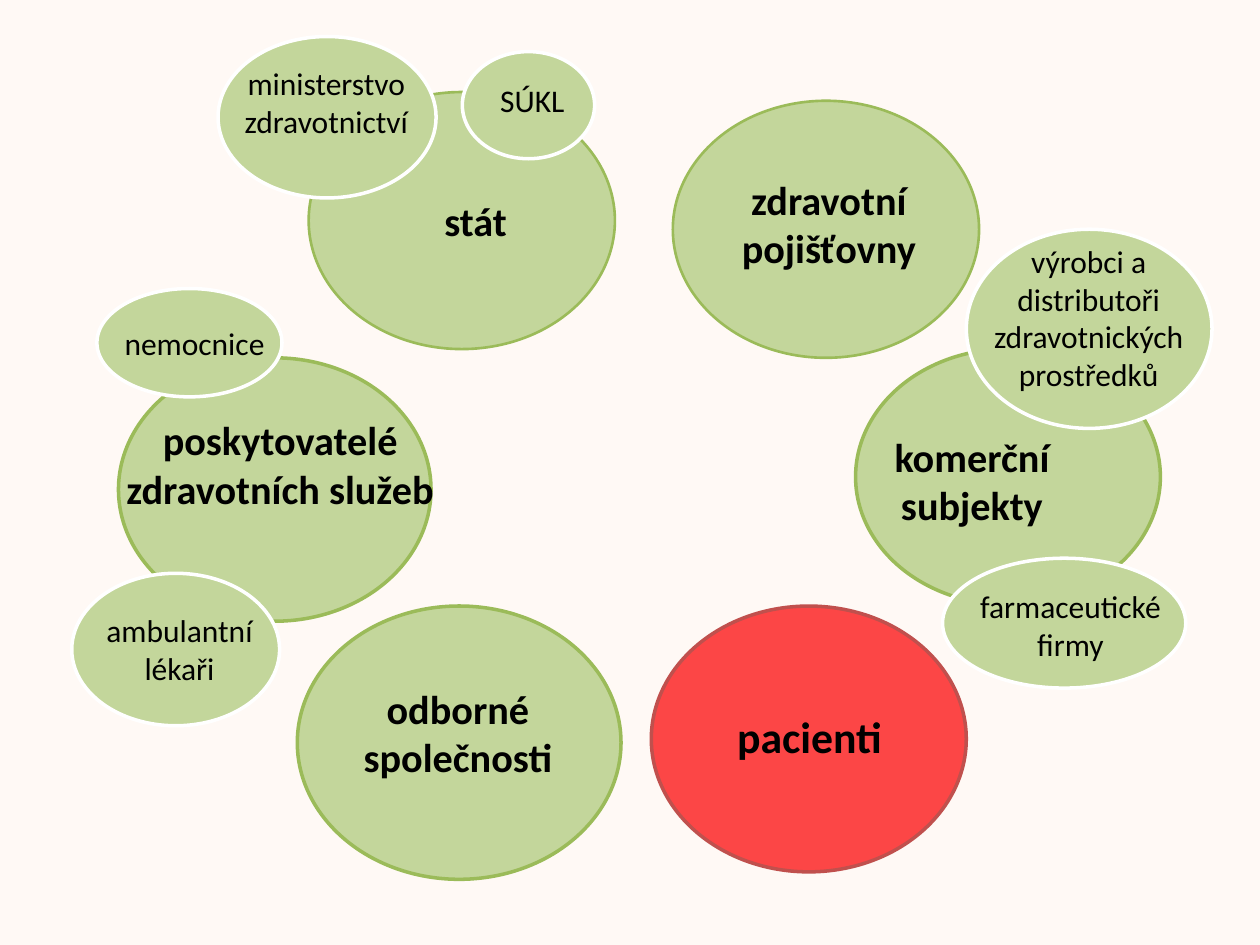
from pptx import Presentation
from pptx import util as u
from pptx.dml.color import RGBColor
from pptx.enum import shapes, text

BACKGROUND = RGBColor(0xFF, 0xF9, 0xF5)
LIGHT_GREEN = RGBColor(0xC3, 0xD6, 0x9B)
GREEN = RGBColor(0x9B, 0xBB, 0x59)
LIGHT_RED = RGBColor(0xFC, 0x46, 0x46)
RED = RGBColor(0xC0, 0x50, 0x4D)
WHITE = RGBColor(0xFF, 0xFF, 0xFF)
BLACK = RGBColor(0, 0, 0)

# Main groups: label, ellipse box, label box, fill, outline, outline width, size
GROUPS = [
    ("stát", (176.4, 52.6, 175, 146.9), (202.3, 108.7, 139, 35.3),
     LIGHT_GREEN, GREEN, 1.5, 23),
    ("komerční subjekty", (488.9, 199.4, 174.2, 146.2), (486, 243.4, 139, 63.4),
     LIGHT_GREEN, GREEN, 2, 23),
    ("zdravotní pojišťovny", (384.5, 57.6, 175, 146.9), (397.4, 96.5, 152.6, 63.4),
     LIGHT_GREEN, GREEN, 1.5, 23),
    ("poskytovatelé zdravotních služeb", (67.7, 204.5, 178.6, 150.5),
     (61.9, 234, 196.6, 90.7), LIGHT_GREEN, GREEN, 2, 23),
    ("odborné společnosti", (169.9, 346.3, 185, 156.2), (186.5, 387.4, 150.5, 63.4),
     LIGHT_GREEN, GREEN, 2, 23),
    ("pacienti", (372.2, 346.3, 180, 151.9), (393.1, 401.8, 139, 37.4),
     LIGHT_RED, RED, 2, 25),
]

# Members of the groups: label, ellipse box, label box
MEMBERS = [
    ("nemocnice", (55.4, 164.9, 105.8, 61.9), (61.9, 181.4, 98.6, 28.8)),
    ("ambulantní lékaři", (41, 327.6, 118.8, 87.1), (46.1, 345.6, 113, 51.1)),
    ("farmaceutické firmy", (538.6, 319, 139, 74.2), (545.8, 331.9, 131.8, 51.1)),
    ("výrobci a distributoři zdravotnických prostředků",
     (552.2, 131, 140.4, 113.8), (545.8, 134.6, 152.6, 94.3)),
    ("ministerstvo zdravotnictví", (124.6, 20.9, 124.6, 92.2),
     (118.1, 33.1, 136.8, 51.1)),
    ("SÚKL", (264.2, 29.5, 75.6, 61.2), (269.3, 42.5, 69.8, 28.8)),
]


class Diagram:
    font = "Calibri"

    def __init__(self, s):
        self.s = s
        fill = s.background.fill
        fill.solid()
        fill.fore_color.rgb = BACKGROUND

    def ellipse(self, box, fill, line, width):
        sp = self.s.shapes.add_shape(shapes.MSO_SHAPE.OVAL, *map(u.Pt, box))
        sp.shadow.inherit = False
        sp.fill.solid()
        sp.fill.fore_color.rgb = fill
        sp.line.color.rgb = line
        sp.line.width = u.Pt(width)

    def label(self, box, words, size, bold):
        tf = self.s.shapes.add_textbox(*map(u.Pt, box)).text_frame
        tf.word_wrap = True
        tf.auto_size = text.MSO_AUTO_SIZE.SHAPE_TO_FIT_TEXT
        p = tf.paragraphs[0]
        p.alignment = text.PP_ALIGN.CENTER
        r = p.add_run()
        r.text = words
        r.font.name = self.font
        r.font.size = u.Pt(size)
        r.font.bold = bold
        r.font.color.rgb = BLACK


def main():
    prs = Presentation()
    prs.slide_width, prs.slide_height = u.Pt(720), u.Pt(540)
    d = Diagram(prs.slides.add_slide(prs.slide_layouts[6]))

    # Main groups
    for words, oval, box, fill, line, width, size in GROUPS:
        d.ellipse(oval, fill, line, width)
        d.label(box, words, size, True)

    # Members on top of their groups
    for words, oval, box in MEMBERS:
        d.ellipse(oval, LIGHT_GREEN, WHITE, 2)
        d.label(box, words, 18, False)

    prs.save("out.pptx")


if __name__ == "__main__":
    main()
